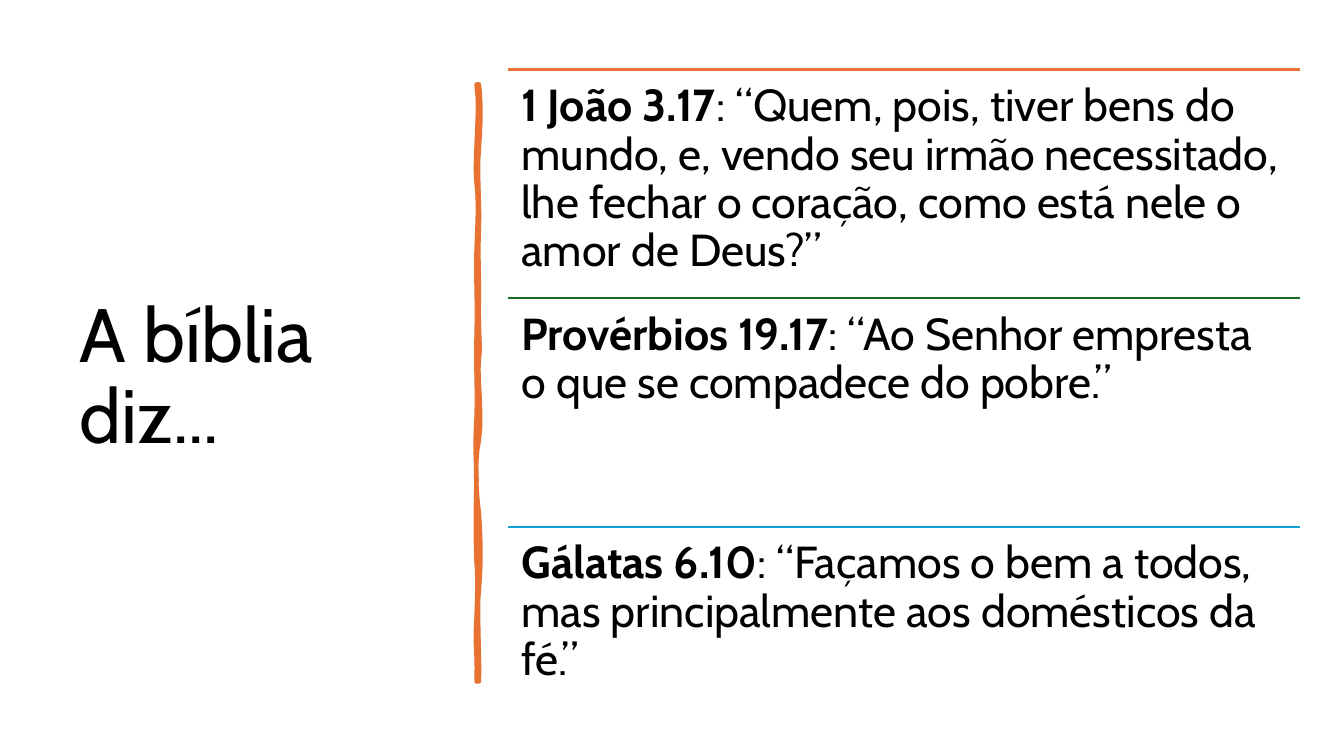
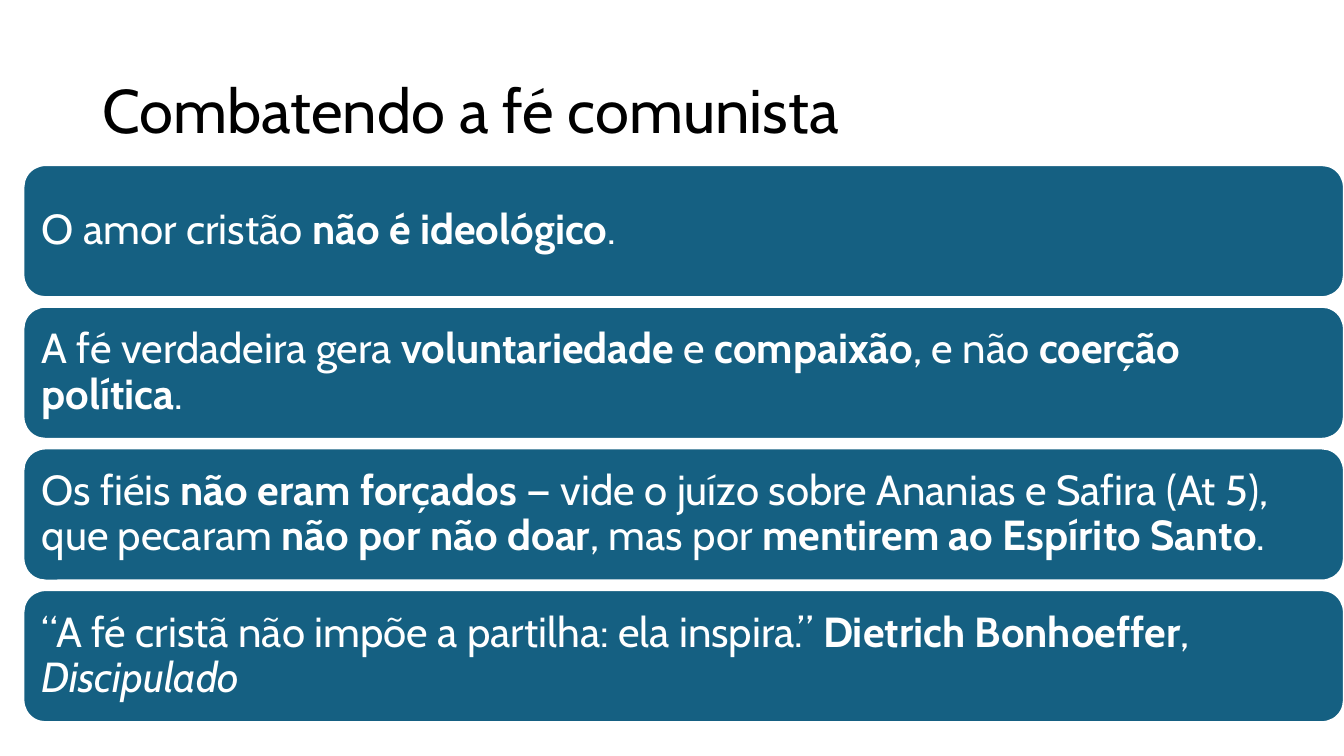
"""Build two slides on Christian charity: Bible verses and a list of statements."""
import lxml.etree
import pptx
import pptx.dml.color
import pptx.enum.shapes
import pptx.enum.text
import pptx.oxml.ns
import pptx.util

Cm = pptx.util.Cm
Pt = pptx.util.Pt
RGBColor = pptx.dml.color.RGBColor
qn = pptx.oxml.ns.qn
MIDDLE = pptx.enum.text.MSO_ANCHOR.MIDDLE
TOP = pptx.enum.text.MSO_ANCHOR.TOP

BLACK = RGBColor(0x00, 0x00, 0x00)
WHITE = RGBColor(0xFF, 0xFF, 0xFF)
ORANGE = RGBColor(0xE9, 0x71, 0x32)
GREEN = RGBColor(0x19, 0x6B, 0x24)
SKY = RGBColor(0x0F, 0x9E, 0xD5)
TEAL = RGBColor(0x15, 0x60, 0x82)

BRUSH_RIGHT = [
    (12.07, 2.13),
    (12.12, 2.59), (12.12, 3.02), (12.07, 3.71),
    (12.01, 4.39), (12.09, 4.95), (12.07, 5.74),
    (12.04, 6.53), (12.07, 6.65), (12.07, 7.47),
    (12.04, 8.26), (12.12, 8.69), (12.07, 9.04),
    (12.01, 9.4), (12.17, 10.52), (12.07, 11.07),
    (11.96, 11.61), (11.99, 12.29), (12.07, 12.95),
    (12.12, 13.61), (12.12, 14.33), (12.07, 14.83),
    (12.01, 15.32), (12.09, 16.51), (12.07, 17.17),
]
BRUSH_LEFT = [
    (12.01, 17.17),
    (12.04, 16.41), (11.96, 16.36), (12.01, 15.57),
    (12.04, 14.81), (12.04, 14.48), (12.01, 14.15),
    (11.99, 13.82), (11.99, 12.57), (12.01, 12.12),
    (12.01, 11.66), (11.96, 11.3), (12.01, 10.54),
    (12.04, 9.8), (11.99, 9.47), (12.01, 8.51),
    (12.04, 7.57), (11.99, 7.14), (12.01, 6.35),
    (12.04, 5.54), (12.07, 5.08), (12.01, 4.6),
    (11.94, 4.14), (12.12, 2.64), (12.01, 2.13),
]

VERSES = [
    (ORANGE, "1 João 3.17",
     ": “Quem, pois, tiver bens do mundo, e, vendo seu irmão necessitado, "
     "lhe fechar o coração, como está nele o amor de Deus?”"),
    (GREEN, "Provérbios 19.17",
     ": “Ao Senhor empresta o que se compadece do pobre.”"),
    (SKY, "Gálatas 6.10",
     ": “Façamos o bem a todos, mas principalmente aos domésticos da fé.”"),
]

STATEMENTS = [
    [("O amor cristão ", ""), ("não é ideológico", "bold"), (".", "")],
    [("A fé verdadeira gera ", ""), ("voluntariedade", "bold"), (" e ", ""),
     ("compaixão", "bold"), (", e não ", ""), ("coerção política", "bold"), (".", "")],
    [("Os fiéis ", ""), ("não eram forçados", "bold"),
     (" — vide o juízo sobre Ananias e Safira (At 5), que pecaram ", ""),
     ("não por não doar", "bold"), (", mas por ", ""),
     ("mentirem ao Espírito Santo", "bold"), (".", "")],
    [("“A fé cristã não impõe a partilha: ela inspira.” ", ""),
     ("Dietrich Bonhoeffer", "bold"), (", ", ""), ("Discipulado", "italic")],
]


def curve_points(knots, steps=6):
    """Return points along a chain of cubic curves."""
    points = [knots[0]]
    for index in range(0, len(knots) - 1, 3):
        a, b, c, d = knots[index:index + 4]
        for step in range(1, steps + 1):
            t = step / steps
            u = 1 - t
            points.append(tuple(
                u ** 3 * a[axis] + 3 * u * u * t * b[axis]
                + 3 * u * t * t * c[axis] + t ** 3 * d[axis]
                for axis in (0, 1)))
    return points


class Deck:
    """Holds the shared style and the current slide."""

    font = "Cabin"
    line_spacing = 0.9

    def __init__(self):
        """Start an empty widescreen presentation."""
        self.presentation = pptx.Presentation()
        self.presentation.slide_width = Cm(33.87)
        self.presentation.slide_height = Cm(19.05)
        self.slide = None

    def set_text(self, shape, runs, size, color, anchor, inset=None):
        """Fill a shape with one left-aligned paragraph of styled runs."""
        frame = shape.text_frame
        frame.word_wrap = True
        frame.auto_size = pptx.enum.text.MSO_AUTO_SIZE.NONE
        frame.vertical_anchor = anchor
        if inset is not None:
            frame.margin_left = frame.margin_right = inset
            frame.margin_top = frame.margin_bottom = inset
        paragraph = frame.paragraphs[0]
        paragraph.alignment = pptx.enum.text.PP_ALIGN.LEFT
        paragraph.line_spacing = self.line_spacing
        for text, style in runs:
            run = paragraph.add_run()
            run.text = text
            run.font.name = self.font
            run.font.size = Pt(size)
            run.font.color.rgb = color
            run.font.bold = style == "bold"
            run.font.italic = style == "italic"

    def add_slide(self, title, size, left, top, width, height):
        """Add a slide and place its title."""
        layout = self.presentation.slide_layouts[5]
        self.slide = self.presentation.slides.add_slide(layout)
        shape = self.slide.shapes.title
        shape.left, shape.top, shape.width, shape.height = left, top, width, height
        self.set_text(shape, [(title, "")], size, BLACK, MIDDLE)

    def add_brush_stroke(self, knots, color):
        """Draw a closed hand-drawn stroke."""
        points = [(Cm(x), Cm(y)) for x, y in knots]
        builder = self.slide.shapes.build_freeform(*points[0])
        builder.add_line_segments(points[1:], close=True)
        shape = builder.convert_to_shape()
        shape.shadow.inherit = False
        shape.fill.solid()
        shape.fill.fore_color.rgb = color
        shape.line.color.rgb = color
        shape.line.width = Pt(3.25)
        outline = shape._element.spPr.find(qn("a:ln"))
        lxml.etree.SubElement(outline, qn("a:round"))

    def add_rule(self, left, top, width, color):
        """Draw a thin horizontal line."""
        connector = self.slide.shapes.add_connector(
            pptx.enum.shapes.MSO_CONNECTOR.STRAIGHT, left, top, left + width, top)
        connector.line.color.rgb = color
        connector.line.width = Pt(1.5)
        lxml.etree.SubElement(connector._element.spPr, qn("a:effectLst"))

    def add_text(self, runs, left, top, width, height):
        """Add a plain text box."""
        shape = self.slide.shapes.add_textbox(left, top, width, height)
        self.set_text(shape, runs, 32, BLACK, TOP, Cm(0.34))

    def add_card(self, runs, left, top, width, height):
        """Add a rounded card with text."""
        shape = self.slide.shapes.add_shape(
            pptx.enum.shapes.MSO_SHAPE.ROUNDED_RECTANGLE, left, top, width, height)
        shape.shadow.inherit = False
        shape.fill.solid()
        shape.fill.fore_color.rgb = TEAL
        shape.line.color.rgb = WHITE
        shape.line.width = Pt(1.5)
        self.set_text(shape, runs, 30, WHITE, MIDDLE, Cm(0.3))


def main():
    """Build and save both slides."""
    deck = Deck()

    deck.add_slide("A bíblia diz...", 54, Cm(1.75), Cm(1.78), Cm(9.5), Cm(15.52))
    deck.add_brush_stroke(curve_points(BRUSH_RIGHT) + curve_points(BRUSH_LEFT), ORANGE)
    left, width, pitch = Cm(12.8), Cm(19.96), Cm(5.76)
    for row, (color, reference, verse) in enumerate(VERSES):
        top = Cm(1.75) + row * pitch
        deck.add_rule(left, top, width, color)
        deck.add_text([(reference, "bold"), (verse, "")], left, top, width, pitch)

    deck.add_slide("Combatendo a fé comunista", 44,
                   Cm(2.33), Cm(1.01), Cm(29.21), Cm(3.68))
    for row, runs in enumerate(STATEMENTS):
        deck.add_card(runs, Cm(0.59), Cm(4.16) + row * Cm(3.57), Cm(33.28), Cm(3.33))

    deck.presentation.save("out.pptx")


if __name__ == "__main__":
    main()
